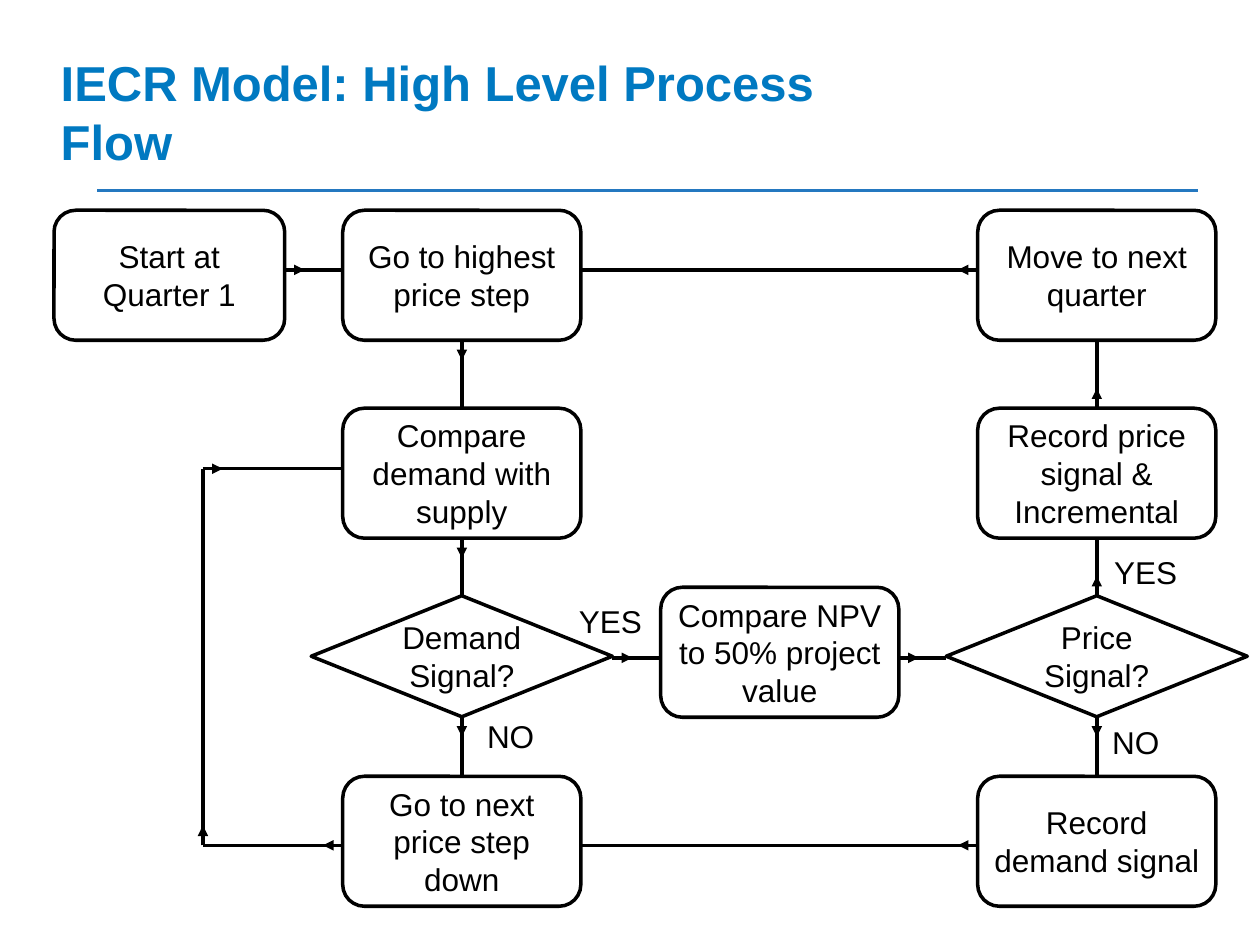
import dataclasses

import lxml.etree
import pptx
import pptx.dml.color
import pptx.enum.shapes
import pptx.enum.text
import pptx.oxml.ns
import pptx.util

Cm = pptx.util.Cm
Pt = pptx.util.Pt
Shape = pptx.enum.shapes.MSO_SHAPE
Align = pptx.enum.text.PP_ALIGN
Anchor = pptx.enum.text.MSO_ANCHOR
Fit = pptx.enum.text.MSO_AUTO_SIZE

COLORS = {"title": "0079C1", "rule": "2478C0", "ink": "000000"}
FONT = "Arial"


@dataclasses.dataclass
class Box:
    """A region of the page, in centimetres."""
    left: float
    top: float
    width: float
    height: float


def color(name):
    return pptx.dml.color.RGBColor.from_string(COLORS[name])


def style_text(frame, size, ink, align, bold=False):
    frame.word_wrap = True
    for para in frame.paragraphs:
        para.alignment = align
        para.font.name = FONT
        para.font.size = Pt(size)
        para.font.bold = bold
        para.font.color.rgb = color(ink)


def set_insets(frame):
    frame.margin_left = frame.margin_right = Cm(0.16)
    frame.margin_top = frame.margin_bottom = Cm(0.13)


def add_line(page, start, end, ink="ink", width=2, arrow=False):
    line = page.shapes.add_connector(
        pptx.enum.shapes.MSO_CONNECTOR.STRAIGHT,
        *(Cm(value) for value in (*start, *end)))
    line.line.color.rgb = color(ink)
    line.line.width = Pt(width)
    properties = line.line._get_or_add_ln()
    if arrow:
        lxml.etree.SubElement(
            properties, pptx.oxml.ns.qn("a:tailEnd"), type="triangle")
    lxml.etree.SubElement(
        properties.getparent(), pptx.oxml.ns.qn("a:effectLst"))


def add_title(page, box):
    title = page.shapes.title
    title.left, title.top = Cm(box.left), Cm(box.top)
    title.width, title.height = Cm(box.width), Cm(box.height)
    frame = title.text_frame
    frame.text = "IECR Model: High Level Process\vFlow"
    frame.auto_size = Fit.NONE
    frame.vertical_anchor = Anchor.MIDDLE
    style_text(frame, 28, "title", Align.LEFT, bold=True)
    # Rule below the title
    rule_y = box.top + 2.49
    add_line(page, (box.left + 0.99, rule_y),
             (box.left + 23.19, rule_y), "rule", 1.5)


def add_node(page, kind, text, box):
    node = page.shapes.add_shape(
        kind, Cm(box.left), Cm(box.top), Cm(box.width), Cm(box.height))
    node.shadow.inherit = False
    node.fill.background()
    node.line.color.rgb = color("ink")
    node.line.width = Pt(2)
    frame = node.text_frame
    frame.text = text
    frame.vertical_anchor = Anchor.MIDDLE
    set_insets(frame)
    style_text(frame, 18, "ink", Align.CENTER)


def add_label(page, text, box):
    label = page.shapes.add_textbox(
        Cm(box.left), Cm(box.top), Cm(box.width), Cm(box.height))
    frame = label.text_frame
    frame.text = text
    set_insets(frame)
    style_text(frame, 18, "ink", Align.CENTER)
    frame.auto_size = Fit.SHAPE_TO_FIT_TEXT


def add_link(page, start, end, arrow_length=0.4):
    """Draw a flow line with an arrowhead just after its start."""
    add_line(page, start, end)
    length = abs(end[0] - start[0]) + abs(end[1] - start[1])
    tip = [a + (b - a) * arrow_length / length for a, b in zip(start, end)]
    add_line(page, start, tip, arrow=True)


def add_flow(page, box):
    # Grid, relative to the region: column centres and row tops
    demand, npv, price = 8.22, 14.63, 21.02
    top, middle, bottom = 0, 3.99, 11.41
    step_width, step_height = 4.8, 2.62
    test_width, test_height, test_top = 6.07, 2.44, 7.77
    start_width, loop = 4.65, 3.0
    half_step, half_test = step_width / 2, test_width / 2
    top_line, middle_line, test_line, bottom_line = 1.2, 5.21, 9.02, 12.8

    # Process steps
    steps = [
        ("Start at Quarter 1", start_width / 2, top, start_width),
        ("Go to highest price step", demand, top, step_width),
        ("Compare demand with supply", demand, middle, step_width),
        ("Go to next price step down", demand, bottom, step_width),
        ("Compare NPV to 50% project value", npv, 7.6, step_width),
        ("Record price signal & Incremental", price, middle, step_width),
        ("Move to next quarter", price, top, step_width),
        ("Record demand signal", price, bottom, step_width),
    ]
    for text, center, row, width in steps:
        add_node(page, Shape.ROUNDED_RECTANGLE, text,
                 Box(box.left + center - width / 2, box.top + row,
                     width, step_height))

    # Decisions
    for text, center in (("Demand Signal?", demand), ("Price Signal?", price)):
        add_node(page, Shape.FLOWCHART_DECISION, text,
                 Box(box.left + center - half_test, box.top + test_top,
                     test_width, test_height))

    # Links, each in the direction of flow
    test_bottom = test_top + test_height
    links = [
        ((start_width, top_line), (demand - half_step, top_line)),
        ((demand, top + step_height), (demand, middle)),
        ((demand, middle + step_height), (demand, test_top)),
        ((demand, test_bottom), (demand, bottom)),
        ((demand + half_test, test_line), (npv - half_step, test_line)),
        ((npv + half_step, test_line), (price - half_test, test_line)),
        ((price, test_top), (price, middle + step_height)),
        ((price, middle), (price, top + step_height)),
        ((price, test_bottom), (price, bottom)),
        ((price - half_step, top_line), (demand + half_step, top_line)),
        ((price - half_step, bottom_line), (demand + half_step, bottom_line)),
        ((demand - half_step, bottom_line), (loop, bottom_line)),
        ((loop, bottom_line), (loop, middle_line)),
        ((loop, middle_line), (demand - half_step, middle_line)),
    ]
    for ends in links:
        add_link(page, *((box.left + x, box.top + y) for x, y in ends))

    # Decision outcomes
    for text, x, y in (("NO", 8.0, 10.09), ("YES", 10.01, 7.77),
                       ("YES", 20.8, 6.78), ("NO", 20.6, 10.21)):
        add_label(page, text, Box(box.left + x, box.top + y, 2.41, 1.02))


def main():
    deck = pptx.Presentation()
    deck.slide_width, deck.slide_height = Cm(25.4), Cm(19.05)
    page = deck.slides.add_slide(deck.slide_layouts.get_by_name("Title Only"))
    add_title(page, Box(0.97, 1.35, 23.75, 1.78))
    add_flow(page, Box(1.09, 4.24, 24.05, 14.03))
    deck.save("out.pptx")


if __name__ == "__main__":
    main()
